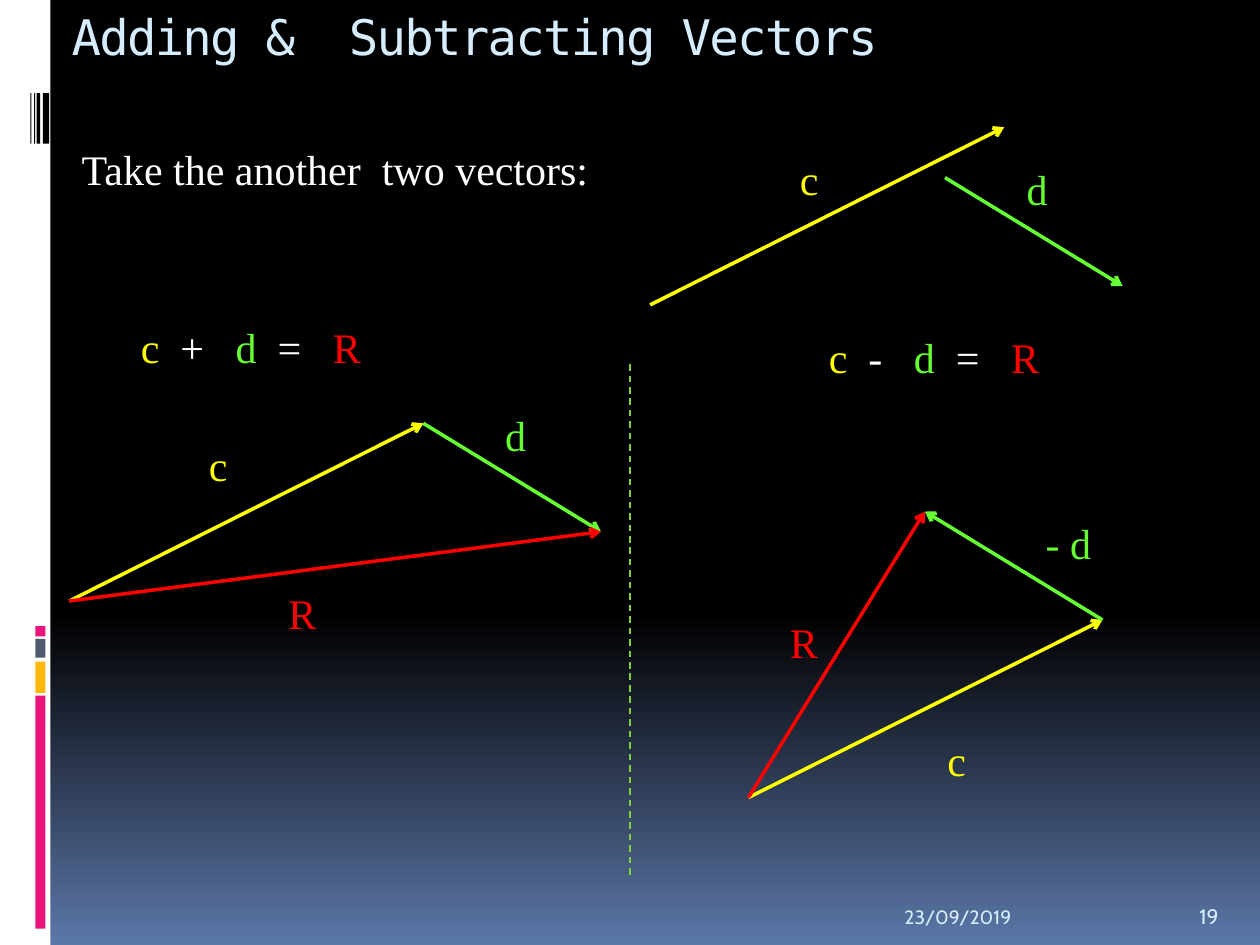
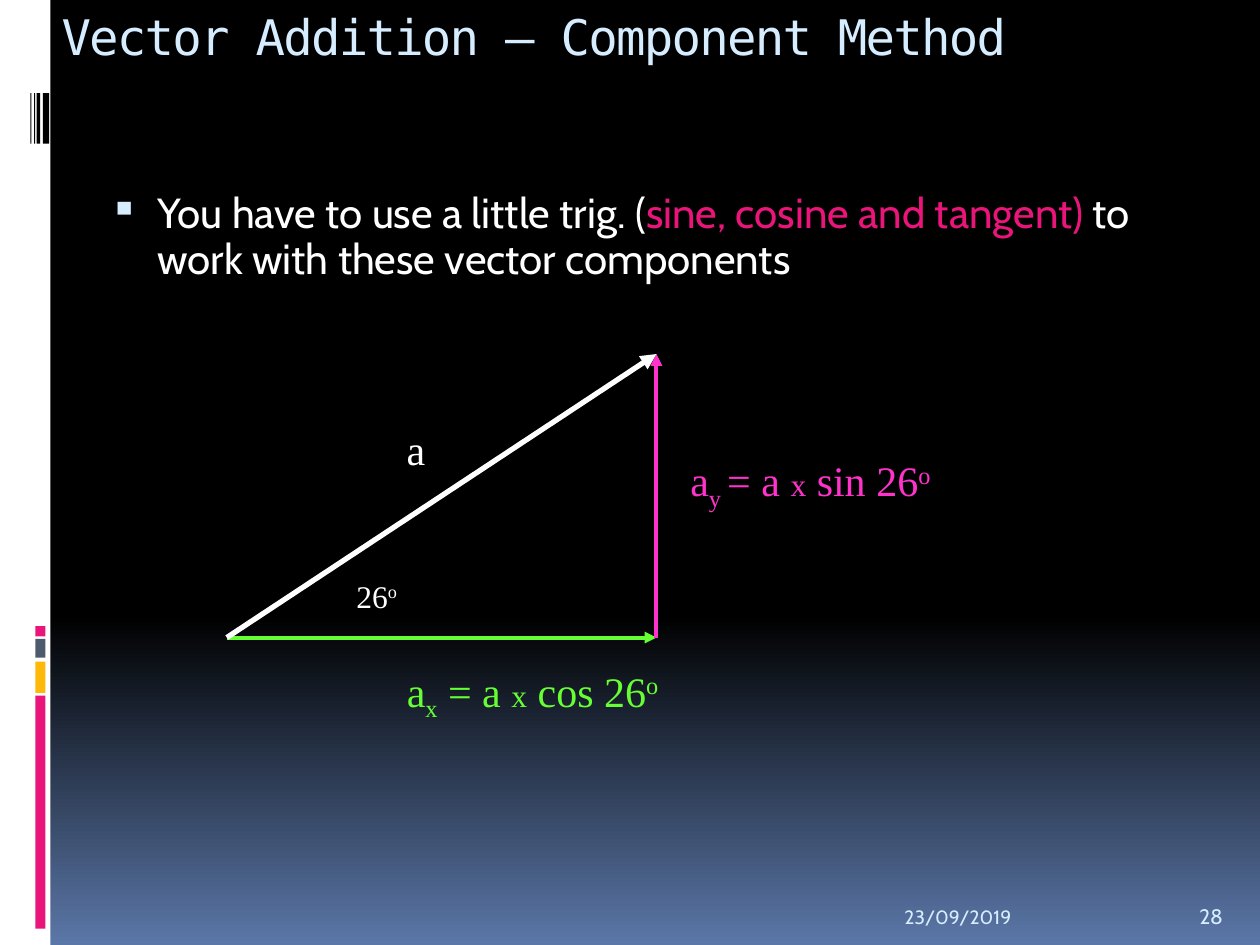
from lxml import etree
from pptx import Presentation
from pptx import util as u
from pptx.dml.color import RGBColor
from pptx.enum import dml, shapes, text
from pptx.oxml import ns

WHITE, BLACK, PALE = "FFFFFF", "000000", "D6ECFF"
PINK, AMBER, SLATE = "EA157A", "FEB80A", "4E5B6F"
YELLOW, GREEN, RED, MAGENTA = "FFFF00", "66FF33", "FF0000", "FF33CC"
DIVIDER, SKY = "7FD13B", "5B77A8"
TITLE_FONT, BODY_FONT, MATH_FONT = "DejaVu Sans Mono", "Cabin", "Times New Roman"
DATE = "23/09/2019"

# Left rail: left, top, width, height, colour
RAIL = [
    (0, 0, 0.4, 7.5, WHITE),
    (0.28, 5.52, 0.08, 1.85, PINK),
    (0.28, 5.25, 0.08, 0.25, AMBER),
    (0.28, 5.07, 0.08, 0.15, SLATE),
    (0.28, 4.97, 0.08, 0.08, PINK),
] + [(left, 0.74, width, 0.4, BLACK)
     for left, width in ((0.34, 0.05), (0.29, 0.03), (0.27, 0.01), (0.24, 0.01))]


def rgb(value):
    return RGBColor.from_string(value)


def add_xml(parent, tag, **attributes):
    return etree.SubElement(parent, ns.qn(tag), **attributes)


def shift(point, step, sign=1):
    return point[0] + sign * step[0], point[1] + sign * step[1]


class Deck:
    def __init__(self):
        self.prs = Presentation()
        self.prs.slide_width, self.prs.slide_height = u.Inches(10), u.Inches(7.5)
        self.slide = None
        fill = self.prs.slide_master.background.fill
        fill.gradient()
        fill.gradient_angle = 270
        for stop, position, color in zip(fill.gradient_stops, (0.65, 1), (BLACK, SKY)):
            stop.position = position
            stop.color.rgb = rgb(color)

    def new_slide(self, title, title_left, title_width, number):
        """Start a slide with the rail, title and footer."""
        self.slide = self.prs.slides.add_slide(self.prs.slide_layouts[6])
        for left, top, width, height, color in RAIL:
            self.bar(left, top, width, height, color)
        heading = self.text(title_left, 0, title_width, 1, [(title,)], PALE, 28, TITLE_FONT)
        heading.runs[0]._r.get_or_add_rPr().set("spc", "-100")
        bottom = text.MSO_ANCHOR.BOTTOM
        self.text(7.08, 7.02, 2.33, 0.4, [(DATE,)], PALE, 11, BODY_FONT, bottom)
        self.text(9.42, 7.02, 0.5, 0.4, [(number,)], PALE, 12, BODY_FONT, bottom)

    def bar(self, left, top, width, height, color):
        shape = self.slide.shapes.add_shape(
            shapes.MSO_SHAPE.RECTANGLE, *map(u.Inches, (left, top, width, height)))
        shape.shadow.inherit = False
        shape.fill.solid()
        shape.fill.fore_color.rgb = rgb(color)
        shape.line.fill.background()

    def text(self, left, top, width, height, runs, color=WHITE, size=24,
             font=MATH_FONT, anchor=text.MSO_ANCHOR.TOP):
        """Add one paragraph; a run is (wording, colour, size, baseline)."""
        box = self.slide.shapes.add_textbox(*map(u.Inches, (left, top, width, height)))
        frame = box.text_frame
        frame.word_wrap = True
        frame.vertical_anchor = anchor
        paragraph = frame.paragraphs[0]
        paragraph.font.name = font
        paragraph.font.size = u.Pt(size)
        paragraph.font.color.rgb = rgb(color)
        for wording, *style in runs:
            run_color, run_size, baseline = style + [None] * (3 - len(style))
            run = paragraph.add_run()
            run.text = wording
            if run_color:
                run.font.color.rgb = rgb(run_color)
            if run_size:
                run.font.size = u.Pt(run_size)
            if baseline:
                run._r.get_or_add_rPr().set("baseline", str(baseline * 1000))
        return paragraph

    def bullet(self, left, top, width, height, runs):
        paragraph = self.text(left, top, width, height, runs, font=BODY_FONT)
        paragraph.line_spacing = 0.9
        paragraph.space_before = u.Pt(7)
        props = paragraph._p.get_or_add_pPr()
        props.set("marL", str(u.Inches(0.45)))
        props.set("indent", str(u.Inches(-0.38)))
        font_defaults = props[-1]
        add_xml(add_xml(props, "a:buClr"), "a:srgbClr", val=PALE)
        add_xml(props, "a:buSzPct", val="95000")
        add_xml(props, "a:buChar", char="▪")
        props.append(font_defaults)

    def line(self, start, end, color, width, head=None, dash=None):
        connector = self.slide.shapes.add_connector(
            shapes.MSO_CONNECTOR.STRAIGHT, *map(u.Inches, (*start, *end)))
        connector.line.color.rgb = rgb(color)
        connector.line.width = u.Pt(width)
        if dash:
            connector.line.dash_style = dash
        props = connector._element.spPr
        if head:
            add_xml(props.find(ns.qn("a:ln")), "a:tailEnd", type=head)
        add_xml(props, "a:effectLst")

    def vector(self, start, end, color, name, label_left, label_top, label_width=0.55):
        self.line(start, end, color, 2, "arrow")
        self.text(label_left, label_top, label_width, 0.5, [(name,)], color)

    def equation(self, left, top, sign):
        self.text(left, top, 2.03, 0.5, [
            ("c", YELLOW), (f"  {sign}   ",), ("d", GREEN), ("  =   ",), ("R", RED)])


def adding_and_subtracting(deck):
    deck.new_slide("Adding &  Subtracting Vectors", 0.47, 9, "19")
    c, d = (2.81, -1.41), (1.41, 0.86)

    # The two given vectors
    deck.text(0.55, 1.09, 4.69, 0.5, [("Take the another  two vectors:",)])
    c_start, d_start = (5.16, 2.42), (7.5, 1.41)
    deck.vector(c_start, shift(c_start, c), YELLOW, "c", 6.25, 1.17, 0.39)
    deck.vector(d_start, shift(d_start, d), GREEN, "d", 8.05, 1.25)

    # Sum
    deck.equation(1.02, 2.5, "+")
    origin = (0.55, 4.77)
    c_tip = shift(origin, c)
    sum_tip = shift(c_tip, d)
    deck.vector(c_tip, sum_tip, GREEN, "d", 3.91, 3.2)
    deck.vector(origin, c_tip, YELLOW, "c", 1.56, 3.44, 0.39)
    deck.vector(origin, sum_tip, RED, "R", 2.19, 4.61)

    deck.line((5, 2.89), (5, 6.95), DIVIDER, 0.94, dash=dml.MSO_LINE.DASH)

    # Difference
    deck.equation(6.48, 2.58, "-")
    origin = (5.94, 6.33)
    c_tip = shift(origin, c)
    difference_tip = shift(c_tip, d, -1)
    deck.vector(origin, c_tip, YELLOW, "c", 7.42, 5.78, 0.39)
    deck.vector(c_tip, difference_tip, GREEN, "- d", 8.2, 4.06, 0.78)
    deck.vector(origin, difference_tip, RED, "R", 6.17, 4.84)


def component_method(deck):
    deck.new_slide("Vector Addition – Component Method", 0.39, 8.5, "28")
    deck.bullet(0.7, 1.48, 8.52, 1.25, [
        ("You have to use a little trig. (",),
        ("sine, cosine and tangent)", PINK),
        (" to work with these vector components",)])

    # Triangle of the vector and its components
    origin, corner, tip = (1.8, 5.06), (5.21, 5.06), (5.21, 2.81)
    deck.line(origin, corner, GREEN, 2.25, "triangle")
    deck.line(corner, tip, MAGENTA, 2.25, "triangle")
    deck.line(origin, tip, WHITE, 3, "triangle")

    # Labels
    degree = ("o", None, None, 30)
    times = ("x", None, 18)
    deck.text(3.13, 3.31, 0.5, 0.5, [("a",)])
    deck.text(2.73, 4.53, 0.92, 0.4, [("26",), degree], size=18)
    deck.text(5.38, 3.56, 2.42, 0.5, [
        ("a",), ("y ", None, None, -25), ("= a ",), times, (" sin 26",), degree], MAGENTA)
    deck.text(3.13, 5.23, 3.25, 0.5, [
        ("a",), ("x", None, None, -25), (" = a ",), times, (" cos 26",), degree], GREEN)


def main():
    deck = Deck()
    adding_and_subtracting(deck)
    component_method(deck)
    deck.prs.save("out.pptx")


if __name__ == "__main__":
    main()
